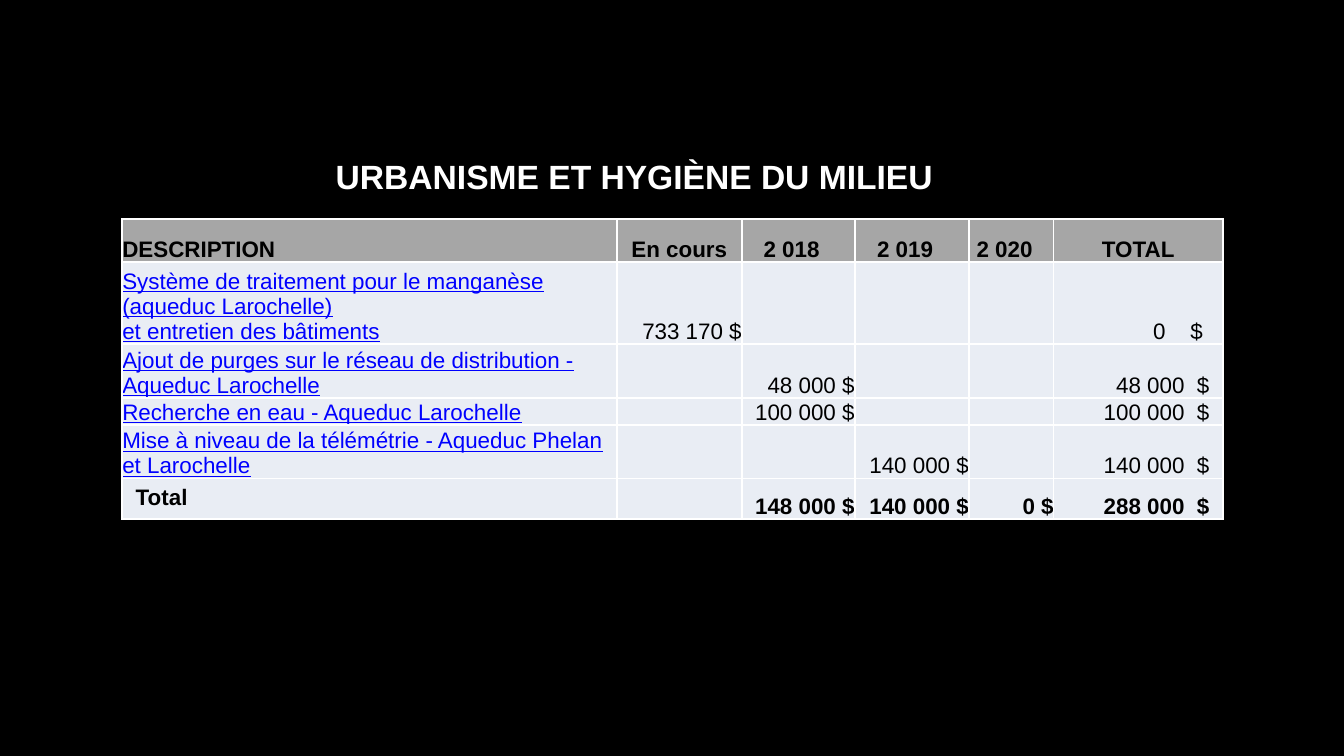
from lxml import etree
from pptx import Presentation
from pptx.dml.color import RGBColor
from pptx.enum.text import MSO_ANCHOR, PP_ALIGN
from pptx.oxml.ns import qn
from pptx.util import Inches, Pt

LEFT, CENTER, RIGHT = PP_ALIGN.LEFT, PP_ALIGN.CENTER, PP_ALIGN.RIGHT
TOP, BOTTOM = MSO_ANCHOR.TOP, MSO_ANCHOR.BOTTOM

BLACK = RGBColor(0x00, 0x00, 0x00)
WHITE = RGBColor(0xFF, 0xFF, 0xFF)
BLUE = RGBColor(0x00, 0x00, 0xFF)
HEADER_GRAY = RGBColor(0xA6, 0xA6, 0xA6)
BODY_GRAY = RGBColor(0xE9, 0xED, 0xF4)

FONT = "Arial"
COLUMN_WIDTHS = [3.68, 0.93, 0.84, 0.85, 0.63, 1.26]
ROW_HEIGHTS = [0.32, 0.61, 0.4, 0.2, 0.4, 0.3]
YEAR_COLUMNS = (2, 3, 4)
ROWS = [
    ["DESCRIPTION", "En cours", "2 018", "2 019", "2 020", "TOTAL"],
    ["Système de traitement pour le manganèse (aqueduc Larochelle)\n"
     "et entretien des bâtiments", "733 170 $", "", "", "", "0    $"],
    ["Ajout de purges sur le réseau de distribution - Aqueduc Larochelle",
     "", "48 000 $", "", "", "48 000  $"],
    ["Recherche en eau - Aqueduc Larochelle",
     "", "100 000 $", "", "", "100 000  $"],
    ["Mise à niveau de la télémétrie - Aqueduc Phelan et Larochelle",
     "", "", "140 000 $", "", "140 000  $"],
    ["Total", "", "148 000 $", "140 000 $", "0 $", "288 000  $"],
]
LAST_ROW = len(ROWS) - 1
LAST_COLUMN = len(COLUMN_WIDTHS) - 1


def add_text(para, text, size, color, bold=False, underline=False):
    for index, line in enumerate(text.split("\n")):
        if index:
            para.add_line_break()
        span = para.add_run()
        span.text = line
        span.font.name = FONT
        span.font.size = Pt(size)
        span.font.color.rgb = color
        span.font.bold = bold
        span.font.underline = underline


def add_title(page, text):
    box = page.shapes.add_textbox(Inches(2.4), Inches(1.11), Inches(4.76), Inches(0.4))
    box.text_frame.word_wrap = False
    add_text(box.text_frame.paragraphs[0], text, 18, WHITE, bold=True)


def add_borders(cell):
    properties = cell._tc.get_or_add_tcPr()
    for side in ("lnL", "lnR", "lnT", "lnB"):
        line = etree.SubElement(properties, qn(f"a:{side}"), w=str(Pt(1)))
        fill = etree.SubElement(line, qn("a:solidFill"))
        etree.SubElement(fill, qn("a:srgbClr"), val=str(WHITE))


def set_margins(cell, row, column):
    left = right = top = bottom = 0
    if row == LAST_ROW and column == 0:
        left = right = 0.1
        top = bottom = 0.05
    elif row == 0 and column in YEAR_COLUMNS:
        right = 0.1
    elif row and column == LAST_COLUMN:
        right = 0.15 if row == 1 else 0.1
    cell.margin_left, cell.margin_right = Inches(left), Inches(right)
    cell.margin_top, cell.margin_bottom = Inches(top), Inches(bottom)


def fill_cell(cell, text, row, column):
    is_header, is_total = row == 0, row == LAST_ROW
    is_link = column == 0 and not is_header and not is_total
    add_borders(cell)
    cell.fill.solid()
    cell.fill.fore_color.rgb = HEADER_GRAY if is_header else BODY_GRAY
    set_margins(cell, row, column)
    cell.vertical_anchor = TOP if is_total and column == 0 else BOTTOM
    para = cell.text_frame.paragraphs[0]
    if not text:
        para._p.get_or_add_endParaRPr().set("sz", "1200")
        return
    para.alignment = LEFT if column == 0 else CENTER if is_header else RIGHT
    add_text(para, text, 12, BLUE if is_link else BLACK,
             bold=is_header or is_total, underline=is_link)


def add_budget_table(page):
    frame = page.shapes.add_table(
        len(ROWS), len(COLUMN_WIDTHS), Inches(0.91), Inches(1.63),
        Inches(sum(COLUMN_WIDTHS)), Inches(sum(ROW_HEIGHTS)))
    table = frame.table
    table.first_row = False
    table.horz_banding = False
    for column, width in zip(table.columns, COLUMN_WIDTHS):
        column.width = Inches(width)
    for row, height in zip(table.rows, ROW_HEIGHTS):
        row.height = Inches(height)
    for row, texts in enumerate(ROWS):
        for column, text in enumerate(texts):
            fill_cell(table.cell(row, column), text, row, column)


def main():
    deck = Presentation()
    deck.slide_width = Inches(10)
    deck.slide_height = deck.slide_width * 9 // 16
    page = deck.slides.add_slide(deck.slide_layouts[6])
    page.background.fill.solid()
    page.background.fill.fore_color.rgb = BLACK
    add_title(page, "URBANISME ET HYGIÈNE DU MILIEU")
    add_budget_table(page)
    deck.save("out.pptx")


if __name__ == "__main__":
    main()
